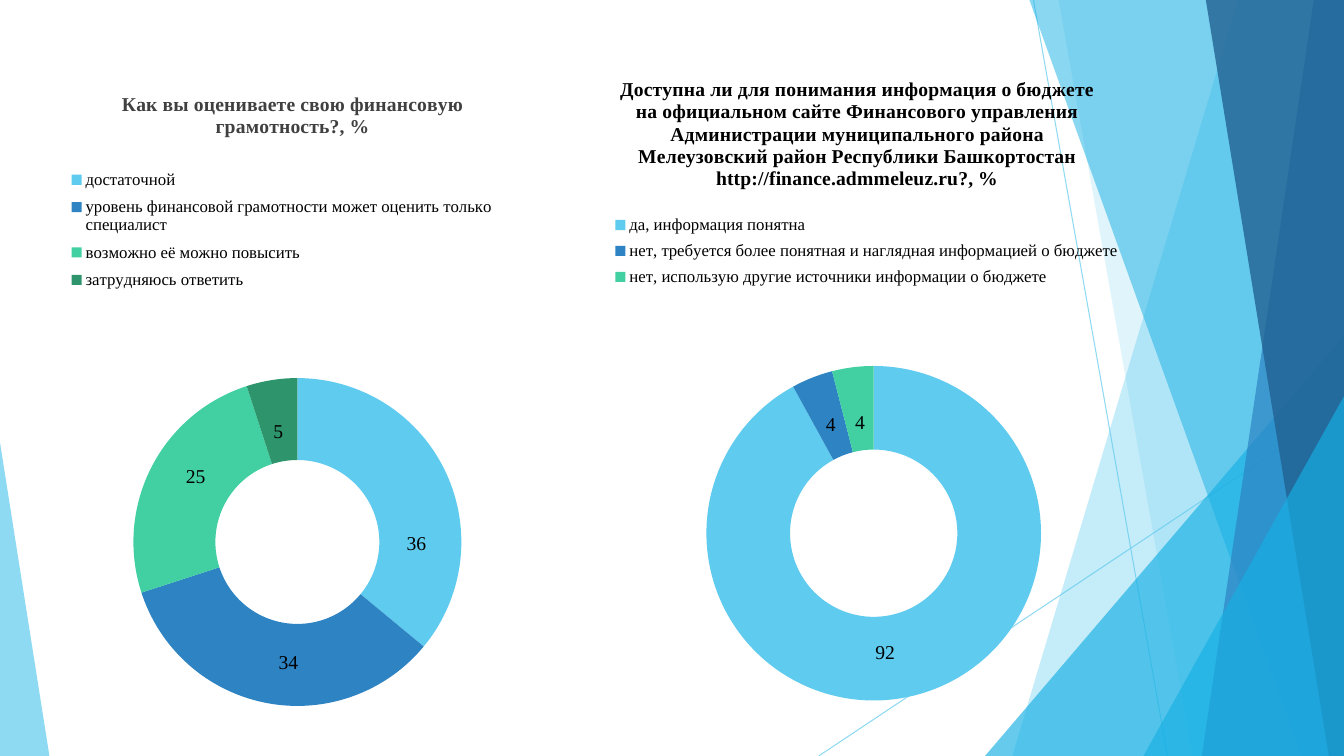
from dataclasses import dataclass

from lxml import etree
from pptx import Presentation
from pptx.chart.data import CategoryChartData
from pptx.dml.color import RGBColor
from pptx.enum.chart import XL_CHART_TYPE, XL_LEGEND_POSITION
from pptx.enum.shapes import MSO_CONNECTOR, MSO_SHAPE
from pptx.enum.text import MSO_ANCHOR, PP_ALIGN
from pptx.oxml.ns import qn
from pptx.util import Inches, Pt

DOUGHNUT = XL_CHART_TYPE.DOUGHNUT
LEGEND_RIGHT = XL_LEGEND_POSITION.RIGHT
STRAIGHT = MSO_CONNECTOR.STRAIGHT
TRIANGLE = MSO_SHAPE.ISOSCELES_TRIANGLE
MIDDLE = MSO_ANCHOR.MIDDLE
CENTER = PP_ALIGN.CENTER
WIDTH, HEIGHT = 13.33, 7.5


@dataclass(frozen=True)
class Theme:
    sky: str = "5FCBEF"
    cyan: str = "17B0E4"
    blue: str = "2E83C3"
    navy: str = "226292"
    mint: str = "42D0A2"
    green: str = "2E946B"
    black: str = "000000"
    gray: str = "404040"
    font: str = "Times New Roman"
    chart_font: str = "Lato"
    chart_size: int = 18
    title_size: int = 14
    legend_size: int = 12
    label_size: int = 14


THEME = Theme()
SLICES = (THEME.sky, THEME.blue, THEME.mint, THEME.green)

RAYS = [
    ((10.25, 0), (11.58, HEIGHT)),
    ((WIDTH, 4.03), (8.12, HEIGHT)),
]
BACK_FACETS = [(12.28, 10.04, THEME.sky, 36), (10.5, 11.83, THEME.sky, 20)]
FRONT_FACETS = [
    (10.21, 12.91, THEME.cyan, 50),
    (13.03, 11.92, THEME.blue, 70),
    (11.96, 13.18, THEME.navy, 80),
]

LITERACY = {
    "title": "Как вы оцениваете свою финансовую грамотность?, %",
    "title_color": THEME.gray,
    "answers": {
        "достаточной": 36,
        "уровень финансовой грамотности может оценить только специалист": 34,
        "возможно её можно повысить": 25,
        "затрудняюсь ответить": 5,
    },
    "frame": (0.23, 0.68, 5.36, 6.48),
    "title_at": (0.176, 0.029),
    "legend_at": (0.059, 0.142, 0.84, 0.21),
    "plot_at": (0.204, 0.474, 0.607, 0.502),
    "labels": [(3.89, 5.26), (2.62, 6.44), (1.7, 4.59), (2.52, 4.15)],
}
BUDGET = {
    "title": "Доступна ли для понимания информация о бюджете на официальном сайте "
             "Финансового управления Администрации муниципального района "
             "Мелеузовский район Республики Башкортостан "
             "http://finance.admmeleuz.ru?, %",
    "title_color": THEME.black,
    "answers": {
        "да, информация понятна": 92,
        "нет, требуется более понятная и наглядная информацией о бюджете": 4,
        "нет, использую другие источники информации о бюджете": 4,
    },
    "frame": (5.5, 0.66, 6.22, 6.56),
    "title_at": (0.099, 0.01),
    "legend_at": (0.078, 0.214, 0.84, 0.13),
    "plot_at": (0.242, 0.453, 0.534, 0.506),
    "labels": [(8.54, 6.34), (8, 4.08), (8.29, 4.06)],
}


def inches(values):
    return [Inches(value) for value in values]


def format_font(font, size, color, name=THEME.font, bold=False):
    font.size = Pt(size)
    font.name = name
    font.bold = bold
    font.color.rgb = RGBColor.from_string(color)


def set_opacity(shape, percent):
    for color in shape._element.spPr.iter(qn("a:srgbClr")):
        etree.SubElement(color, qn("a:alpha"), val=str(percent * 1000))


def paint(shape, color, opacity):
    shape.shadow.inherit = False
    shape.fill.solid()
    shape.fill.fore_color.rgb = RGBColor.from_string(color)
    shape.line.fill.background()
    set_opacity(shape, opacity)


def add_ray(page, start, end):
    ray = page.shapes.add_connector(STRAIGHT, *inches(start + end))
    ray.line.width = Pt(0.75)
    ray.line.color.rgb = RGBColor.from_string(THEME.sky)
    set_opacity(ray, 70)
    etree.SubElement(ray._element.spPr, qn("a:effectLst"))


def add_facet(page, top_x, bottom_x, color, opacity):
    corners = [(WIDTH, 0), (WIDTH, HEIGHT), (bottom_x, HEIGHT)]
    builder = page.shapes.build_freeform(Inches(top_x), 0)
    builder.add_line_segments([inches(corner) for corner in corners], close=True)
    paint(builder.convert_to_shape(), color, opacity)


def add_triangle(page, frame, peak, color, opacity):
    triangle = page.shapes.add_shape(TRIANGLE, *inches(frame))
    triangle.adjustments[0] = peak
    paint(triangle, color, opacity)


def add_text(page, text, left, top, width=0.48, height=0.25, size=THEME.label_size,
             color=THEME.black, align=CENTER):
    box = page.shapes.add_textbox(*inches((left, top, width, height)))
    frame = box.text_frame
    frame.word_wrap = True
    frame.vertical_anchor = MIDDLE
    frame.margin_left = frame.margin_right = 0
    frame.margin_top = frame.margin_bottom = 0
    para = frame.paragraphs[0]
    para.alignment = align
    span = para.add_run()
    span.text = text
    format_font(span.font, size, color)


def place(part, index, fractions, inner=False):
    for old in part.findall(qn("c:layout")):
        part.remove(old)
    layout = etree.Element(qn("c:layout"))
    manual = etree.SubElement(layout, qn("c:manualLayout"))
    if inner:
        etree.SubElement(manual, qn("c:layoutTarget"), val="inner")
    for axis in ("x", "y"):
        etree.SubElement(manual, qn(f"c:{axis}Mode"), val="edge")
    for key, value in zip("xywh", fractions):
        etree.SubElement(manual, qn(f"c:{key}"), val=str(value))
    part.insert(index, layout)


def add_doughnut(page, survey):
    answers = survey["answers"]
    data = CategoryChartData()
    data.categories = list(answers)
    data.add_series("Series 1", list(answers.values()))
    chart = page.shapes.add_chart(DOUGHNUT, *inches(survey["frame"]), data).chart
    format_font(chart.font, THEME.chart_size, THEME.black, name=THEME.chart_font)

    chart.has_title = True
    para = chart.chart_title.text_frame.paragraphs[0]
    span = para.add_run()
    span.text = survey["title"]
    format_font(span.font, THEME.title_size, survey["title_color"], bold=True)

    chart.has_legend = True
    chart.legend.position = LEGEND_RIGHT
    chart.legend.include_in_layout = False
    format_font(chart.legend.font, THEME.legend_size, THEME.black)

    chart.plots[0].vary_by_categories = True
    points = chart.plots[0].series[0].points
    for index, color in enumerate(SLICES[:len(answers)]):
        points[index].format.fill.solid()
        points[index].format.fill.fore_color.rgb = RGBColor.from_string(color)
        points[index].format.line.fill.background()

    body = chart.element.find(qn("c:chart"))
    place(body.find(qn("c:title")), 1, survey["title_at"])
    place(body.find(qn("c:legend")), 1, survey["legend_at"])
    place(body.find(qn("c:plotArea")), 0, survey["plot_at"], inner=True)


def main():
    deck = Presentation()
    deck.slide_width, deck.slide_height = inches((WIDTH, HEIGHT))
    page = deck.slides.add_slide(deck.slide_layouts[6])
    for start, end in RAYS:
        add_ray(page, start, end)
    for facet in BACK_FACETS:
        add_facet(page, *facet)
    add_triangle(page, (9.77, 3.33, 3.56, 4.17), 1, THEME.cyan, 66)
    for facet in FRONT_FACETS:
        add_facet(page, *facet)
    add_triangle(page, (11.34, 3.93, 1.99, 3.57), 1, THEME.cyan, 66)
    add_triangle(page, (0, 4.39, 0.49, 3.11), 0, THEME.sky, 70)
    for survey in (LITERACY, BUDGET):
        add_doughnut(page, survey)
        for value, corner in zip(survey["answers"].values(), survey["labels"]):
            add_text(page, str(value), *corner)
    deck.save("out.pptx")


if __name__ == "__main__":
    main()
